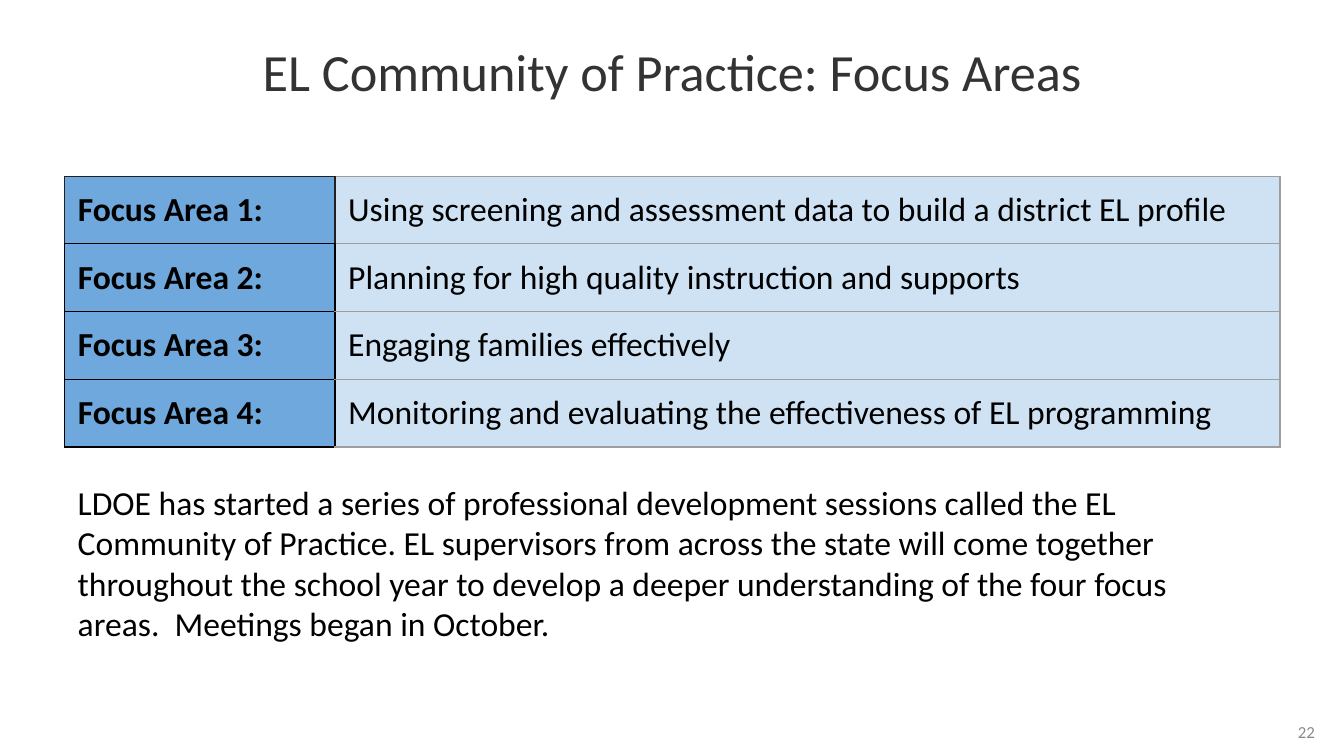
"""Build the slide on the focus areas of the EL Community of Practice."""
import lxml.etree
import pptx
import pptx.dml.color
import pptx.enum.text
import pptx.oxml.ns
import pptx.util

Cm, Pt = pptx.util.Cm, pptx.util.Pt
ALIGN = pptx.enum.text.PP_ALIGN
ANCHOR = pptx.enum.text.MSO_ANCHOR

TITLE = "EL Community of Practice: Focus Areas"
AREAS = [
    "Using screening and assessment data to build a district EL profile",
    "Planning for high quality instruction and supports",
    "Engaging families effectively",
    "Monitoring and evaluating the effectiveness of EL programming",
]
NOTE = (
    "LDOE has started a series of professional development sessions called "
    "the EL Community of Practice. EL supervisors from across the state will "
    "come together throughout the school year to develop a deeper "
    "understanding of the four focus areas.  Meetings began in October."
)
NUMBER = "22"

THEME = {
    "font": "Calibri",
    "title": (28, "333333"),
    "body": (18, "000000"),
    "number": (9, "8A8A8A"),
    "label": "6FA8DC",
    "area": "CFE2F3",
    "top": "212121",
    "dark": "000000",
    "grey": "9E9E9E",
    "line": 0.75,
}
WIDTH, HEIGHT = Cm(25.4), Cm(14.29)
LEFT, TOP, PAD = Cm(1.22), Cm(3.33), Cm(0.25)
COLS = [Cm(5.11), Cm(17.86)]
ROW = Cm(1.28)


def color(code):
    return pptx.dml.color.RGBColor.from_string(code)


def write(frame, text, style, align=ALIGN.LEFT, bold=False):
    size, code = THEME[style]
    para = frame.paragraphs[0]
    para.alignment = align
    run = para.add_run()
    run.text = text
    run.font.name = THEME["font"]
    run.font.size = Pt(size)
    run.font.bold = bold
    run.font.color.rgb = color(code)
    return para


def add_text(slide, area, text, style, align=ALIGN.LEFT,
             anchor=ANCHOR.TOP, pad=PAD):
    frame = slide.shapes.add_textbox(*area).text_frame
    frame.word_wrap = True
    frame.vertical_anchor = anchor
    frame.margin_left = frame.margin_right = PAD
    frame.margin_top = frame.margin_bottom = pad
    return write(frame, text, style, align)


def add_edges(cell, codes):
    props = cell._tc.get_or_add_tcPr()
    qn = pptx.oxml.ns.qn
    for side, code in zip("LRTB", codes):
        line = lxml.etree.SubElement(
            props, qn(f"a:ln{side}"), w=str(Pt(THEME["line"])))
        fill = lxml.etree.SubElement(line, qn("a:solidFill"))
        lxml.etree.SubElement(fill, qn("a:srgbClr"), val=code)


def fill_cell(cell, text, shade, edges, bold):
    cell.margin_left = cell.margin_right = PAD
    cell.margin_top = cell.margin_bottom = PAD
    add_edges(cell, edges)
    cell.fill.solid()
    cell.fill.fore_color.rgb = color(THEME[shade])
    write(cell.text_frame, text, "body", bold=bold)


def add_areas(slide):
    count = len(AREAS)
    table = slide.shapes.add_table(
        count, len(COLS), LEFT, TOP, sum(COLS), ROW * count).table
    table.first_row = table.horz_banding = False
    for col, width in zip(table.columns, COLS):
        col.width = width
    for i, area in enumerate(AREAS):
        table.rows[i].height = ROW
        ink = THEME["dark" if i else "top"]
        fill_cell(table.cell(i, 0), f"Focus Area {i + 1}:", "label",
                  [ink] * 4, True)
        fill_cell(table.cell(i, 1), area, "area",
                  [ink] + [THEME["grey"]] * 3, False)


def main():
    deck = pptx.Presentation()
    deck.slide_width, deck.slide_height = WIDTH, HEIGHT
    slide = deck.slides.add_slide(deck.slide_layouts[6])
    add_text(slide, (Cm(18.9), Cm(13.34), Cm(6.2), Cm(0.97)), NUMBER,
             "number", ALIGN.RIGHT, ANCHOR.MIDDLE, Cm(0.13))
    head = add_text(slide, (0, Cm(-0.05), WIDTH, Cm(2.92)), TITLE,
                    "title", ALIGN.CENTER, ANCHOR.MIDDLE)
    head.line_spacing = 0.9
    add_areas(slide)
    add_text(slide, (LEFT, Cm(8.86), Cm(22.12), Cm(3.96)), NOTE, "body")
    deck.save("out.pptx")


if __name__ == "__main__":
    main()
